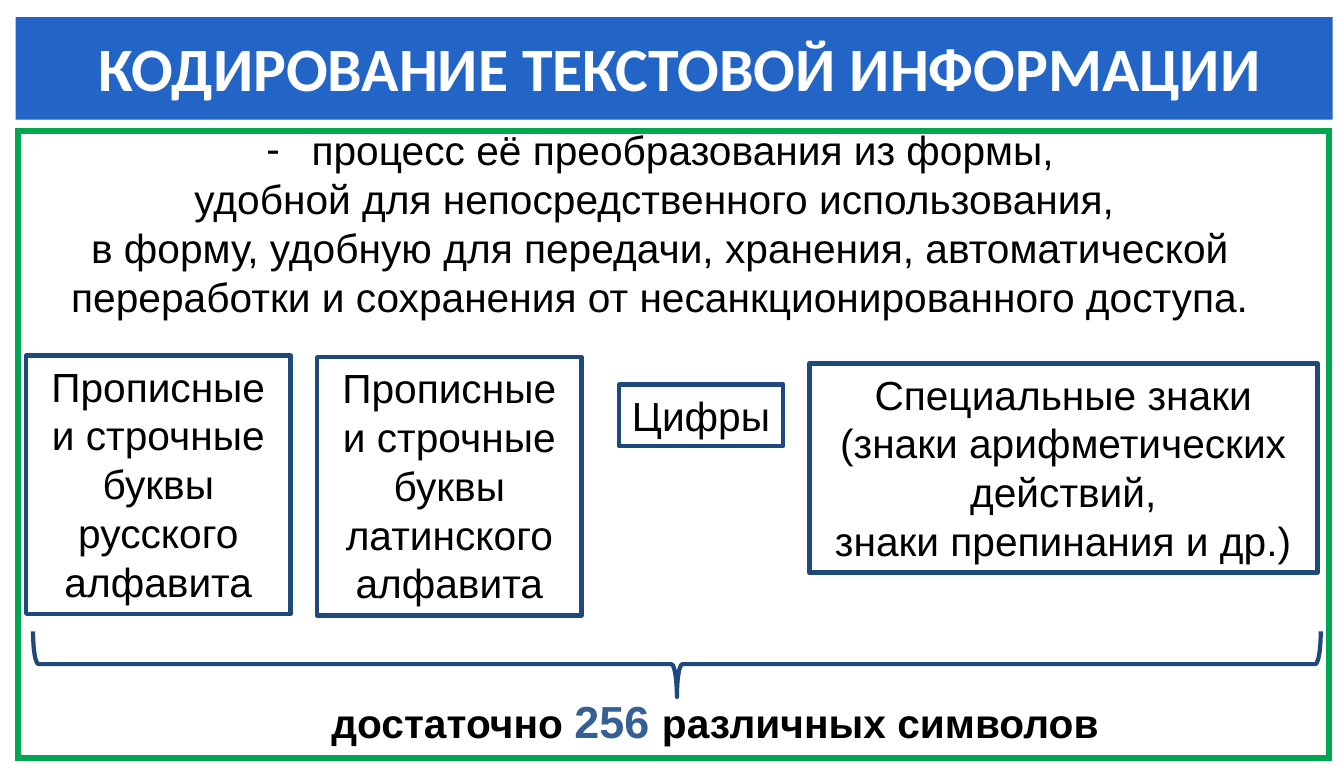
from lxml import etree
from pptx import Presentation
from pptx.dml.color import RGBColor
from pptx.enum.shapes import MSO_SHAPE
from pptx.enum.text import MSO_ANCHOR, MSO_AUTO_SIZE, PP_ALIGN
from pptx.oxml.ns import qn
from pptx.util import Cm, Emu, Pt

RECTANGLE, BRACE = MSO_SHAPE.RECTANGLE, MSO_SHAPE.RIGHT_BRACE
TOP, MIDDLE = MSO_ANCHOR.TOP, MSO_ANCHOR.MIDDLE
CENTER, NO_AUTOFIT = PP_ALIGN.CENTER, MSO_AUTO_SIZE.NONE

BLACK = RGBColor(0x00, 0x00, 0x00)
WHITE = RGBColor(0xFF, 0xFF, 0xFF)
GREEN = RGBColor(0x00, 0xA6, 0x50)
BLUE = RGBColor(0x23, 0x65, 0xC7)
NAVY = RGBColor(0x1F, 0x49, 0x7D)
STEEL = RGBColor(0x37, 0x60, 0x92)

FRAME_FORMAT = dict(margin_left=Cm(0.3), margin_right=Cm(0.3), margin_top=Cm(0.15),
                    margin_bottom=Cm(0.15), word_wrap=True,
                    auto_size=NO_AUTOFIT, vertical_anchor=TOP)


def write(frame, paragraphs, size=29, color=BLACK, font="Arial", bold=False, **changes):
    """Fill a frame with centred paragraphs; each is a list of (text, run changes)."""
    for key, value in (FRAME_FORMAT | changes).items():
        setattr(frame, key, value)
    for index, runs in enumerate(paragraphs):
        paragraph = frame.paragraphs[0] if index == 0 else frame.add_paragraph()
        paragraph.alignment = CENTER
        paragraph.space_before = Pt(0)
        for text, run_changes in runs:
            run = paragraph.add_run()
            run.text = text
            look = dict(size=Pt(size), name=font, bold=bold) | run_changes
            run.font.color.rgb = look.pop("color", color)
            for key, value in look.items():
                setattr(run.font, key, value)


def add_outline(kind, box, color, width):
    outline = slide.shapes.add_shape(kind, *map(Cm, box))
    outline.shadow.inherit = False
    outline.fill.background()
    outline.line.color.rgb = color
    outline.line.width = Pt(width)
    return outline


prs = Presentation()
prs.slide_width, prs.slide_height = Emu(12169775), Emu(7021513)
slide = prs.slides.add_slide(prs.slide_layouts[1])

# Heading banner
heading = slide.shapes.title
heading.left, heading.top, heading.width, heading.height = map(Cm, (0.39, 0.43, 33.13, 2.58))
heading.fill.solid()
heading.fill.fore_color.rgb = BLUE
write(heading.text_frame, [[("КОДИРОВАНИЕ ТЕКСТОВОЙ ИНФОРМАЦИИ", {})]],
      size=44, color=WHITE, font="Calibri", bold=True, vertical_anchor=MIDDLE,
      margin_left=Cm(0.6), margin_bottom=Cm(0.25))

# Definition
definition = slide.placeholders[1]
definition.left, definition.top, definition.width, definition.height = map(
    Cm, (0.64, 3, 31.95, 5.26))
write(definition.text_frame, [[(line, {})] for line in (
    "процесс её преобразования из формы,",
    "удобной для непосредственного использования, ",
    "в форму, удобную для передачи, хранения, автоматической переработки "
    "и сохранения от несанкционированного доступа.",
)])
for index, paragraph in enumerate(definition.text_frame.paragraphs):
    properties = paragraph._p.get_or_add_pPr()
    indent = Cm(1.14) if index == 0 else 0
    properties.set("marL", str(indent))
    properties.set("indent", str(-indent))
    if index == 0:
        etree.SubElement(properties, qn("a:buChar")).set("char", "-")
    else:
        etree.SubElement(properties, qn("a:buNone"))

# Green border with square corners
border = add_outline(RECTANGLE, (0.46, 3.3, 32.98, 15.77), GREEN, 4.3)
etree.SubElement(border.line._get_or_add_ln(), qn("a:miter")).set("lim", "800000")

# Character groups
CHARACTER_GROUPS = [
    ((0.66, 8.95, 6.65, 6.5), True, ["Прописные и строчные буквы русского алфавита"]),
    ((7.98, 8.99, 6.65, 6.5), True, ["Прописные и строчные буквы латинского алфавита"]),
    ((15.57, 9.68, 4.13, 1.55), False, ["Цифры"]),
    ((20.36, 9.15, 12.78, 5.26), True,
     ["Специальные знаки", "(знаки арифметических", "действий,", "знаки препинания и др.)"]),
]
for box, wraps, lines in CHARACTER_GROUPS:
    group = add_outline(RECTANGLE, box, NAVY, 3)
    write(group.text_frame, [[(line, {})] for line in lines], word_wrap=wraps)

# Brace and total
brace = add_outline(BRACE, (16.2, 0.52, 1.65, 32.39), NAVY, 3)
brace.rotation = 90
total = slide.shapes.add_textbox(*map(Cm, (6.38, 17.3, 23.22, 1.68)))
write(total.text_frame, [[("достаточно ", {}),
                          ("256 ", dict(size=Pt(32), color=STEEL)),
                          ("различных символов", {})]], bold=True)

prs.save("out.pptx")
